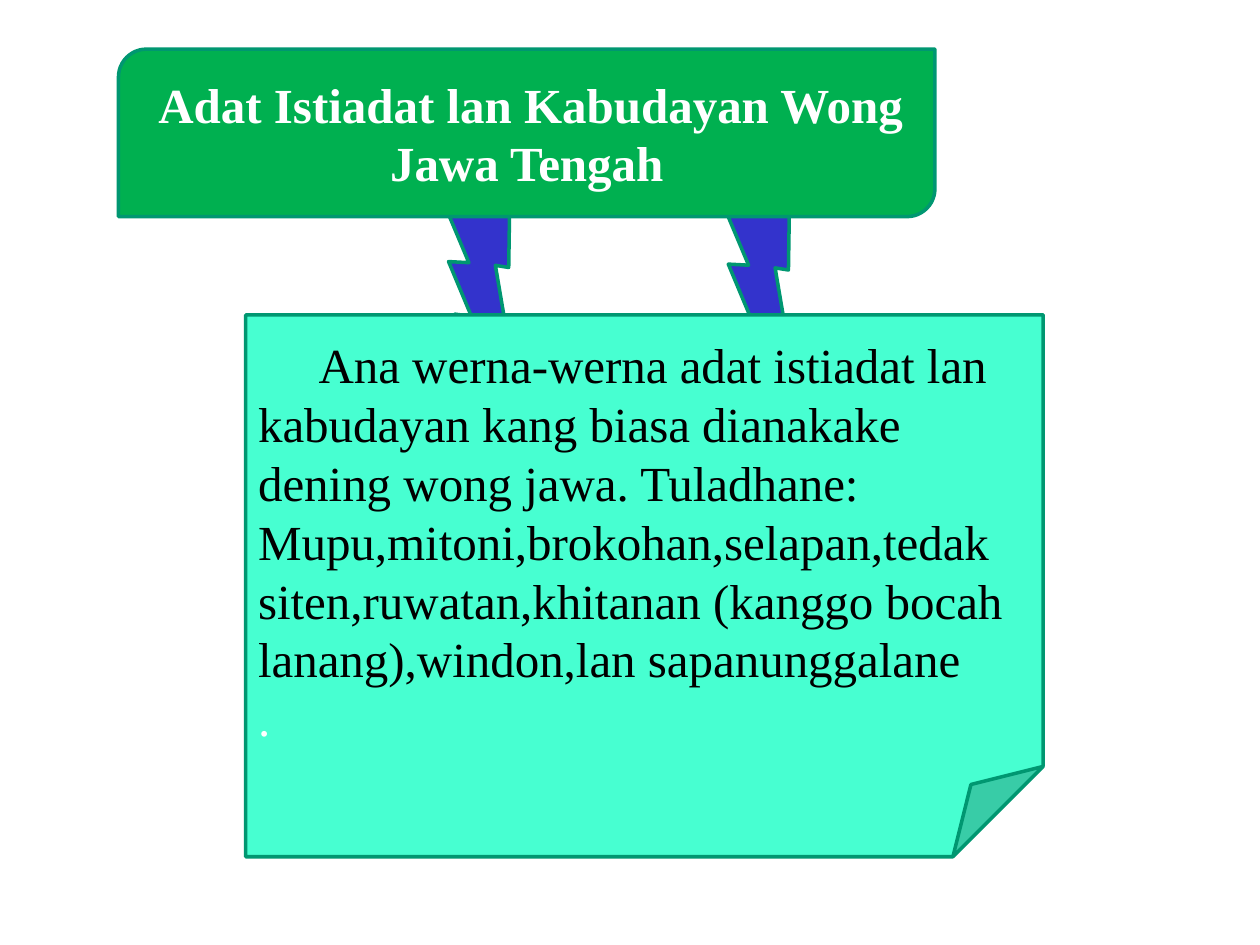
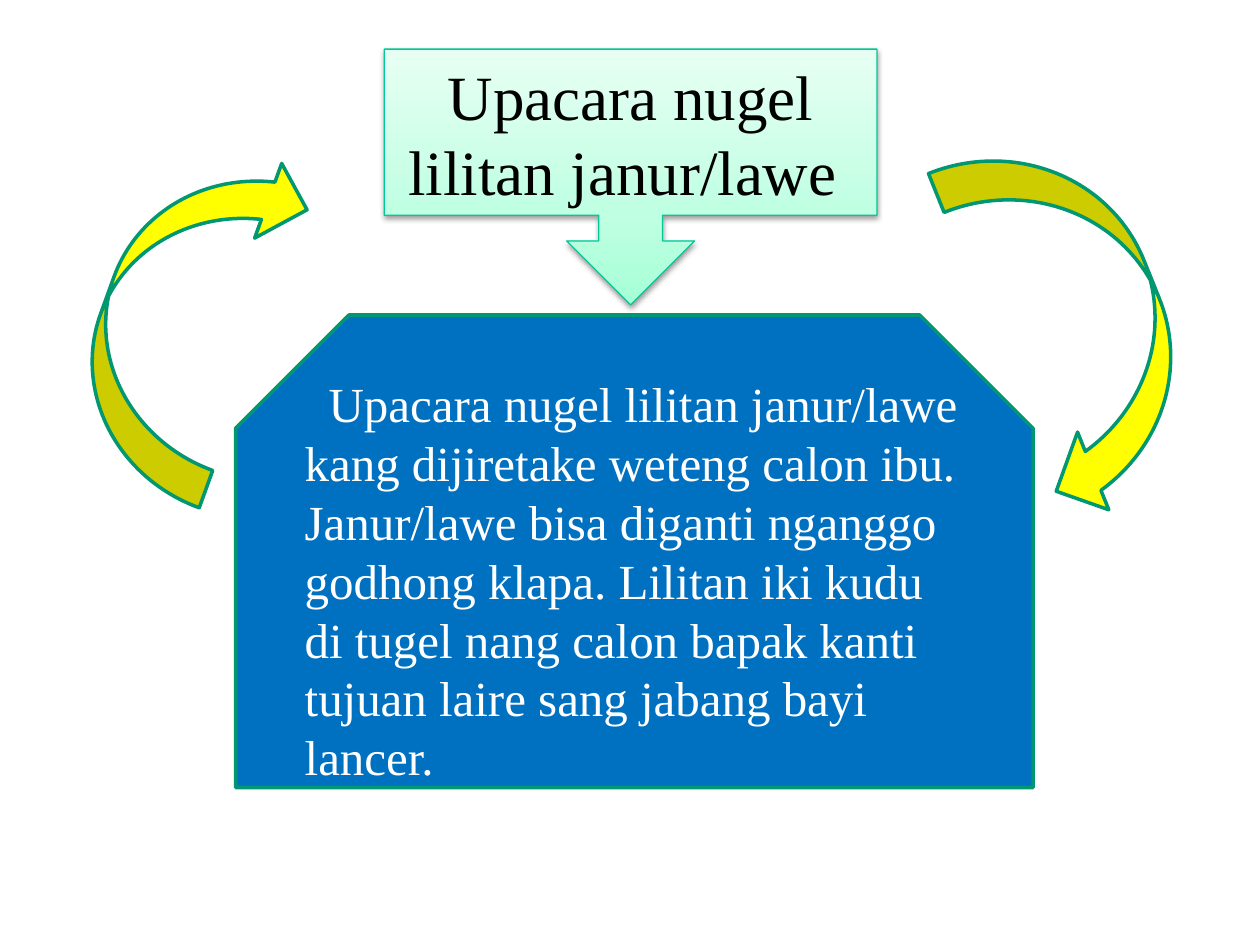
import copy
from dataclasses import dataclass

import pptx
import pptx.dml.color
import pptx.enum.shapes
import pptx.enum.text
import pptx.oxml
import pptx.oxml.ns
import pptx.util
from lxml import etree

Inches = pptx.util.Inches
Pt = pptx.util.Pt
qn = pptx.oxml.ns.qn
SHAPE = pptx.enum.shapes.MSO_SHAPE
ALIGN = pptx.enum.text.PP_ALIGN
ANCHOR = pptx.enum.text.MSO_ANCHOR


@dataclass(frozen=True)
class Theme:
    font: str = "Times New Roman"
    text_size: int = 28
    large_size: int = 36
    white: str = "FFFFFF"
    black: str = "000000"
    outline: str = "009771"
    outline_width: float = 2
    callout_outline: str = "00C896"
    callout_width: float = 0.75
    callout_stops: tuple = ((0, "A5FFD6"), (0.35, "BFFFE2"), (1, "E7FFF3"))
    bolt: str = "3333CC"
    banner: str = "00B050"
    note: str = "47FFD1"
    arrow: str = "FFFF00"
    panel: str = "0070C0"


THEME = Theme()


def rgb(value):
    return pptx.dml.color.RGBColor.from_string(value)


def write(p, text, size=THEME.text_size, color=THEME.black, bold=False,
          align=ALIGN.LEFT, indent=0):
    """Write one formatted paragraph; indent moves its first line."""
    if indent:
        pPr = p._p.get_or_add_pPr()
        pPr.set("marL", "0")
        pPr.set("indent", str(Inches(indent)))
    p.alignment = align
    r = p.add_run()
    r.text = text
    r.font.name = THEME.font
    r.font.size = Pt(size)
    r.font.bold = bold
    r.font.color.rgb = rgb(color)


class Deck:
    TOP, TITLE_HEIGHT = 0.39, 1.33
    BODY_TOP, BODY_WIDTH = 2.5, 6.33

    def __init__(self, theme):
        self.theme = theme
        self.prs = pptx.Presentation()
        self.prs.slide_width = Inches(10)
        self.prs.slide_height = Inches(7.5)
        self.slide = None

    def new_slide(self):
        self.slide = self.prs.slides.add_slide(self.prs.slide_layouts[5])

    def shape(self, kind, left, top, width, height, fill=None, rotation=0,
              flip=False):
        sp = self.slide.shapes.add_shape(
            kind, Inches(left), Inches(top), Inches(width), Inches(height))
        sp.shadow.inherit = False
        sp.rotation = rotation
        if flip:
            sp._element.spPr.xfrm.set("flipH", "1")
        if fill:
            sp.fill.solid()
            sp.fill.fore_color.rgb = rgb(fill)
        sp.line.color.rgb = rgb(self.theme.outline)
        sp.line.width = Pt(self.theme.outline_width)
        return sp

    def callout(self, left, width, height):
        """Shaded arrow callout with a soft shadow."""
        sp = self.shape(SHAPE.DOWN_ARROW_CALLOUT, left, self.TOP, width, height)
        sp.line.color.rgb = rgb(self.theme.callout_outline)
        sp.line.width = Pt(self.theme.callout_width)
        # Three-stop gradient rising from the bottom
        sp.fill.gradient()
        sp.fill.gradient_angle = 90
        gs = sp._element.spPr.find(".//" + qn("a:gs"))
        gs.addnext(copy.deepcopy(gs))
        for stop, (position, color) in zip(sp.fill.gradient_stops,
                                           self.theme.callout_stops):
            stop.position = position
            stop.color.rgb = rgb(color)
        # Shadow straight below
        effects = sp._element.spPr.find(qn("a:effectLst"))
        shadow = etree.SubElement(
            effects, qn("a:outerShdw"), blurRad=str(Pt(3.1)),
            dist=str(Pt(1.6)), dir="5400000", rotWithShape="0")
        color = etree.SubElement(shadow, qn("a:srgbClr"), val=self.theme.black)
        etree.SubElement(color, qn("a:alpha"), val="38000")

    def title(self, text, left, width, **style):
        """Place the title placeholder over the slide's heading shape."""
        sp = self.slide.shapes.title
        sp.left, sp.top = Inches(left), Inches(self.TOP)
        sp.width, sp.height = Inches(width), Inches(self.TITLE_HEIGHT)
        tf = sp.text_frame
        tf.word_wrap = True
        tf.auto_size = pptx.enum.text.MSO_AUTO_SIZE.NONE
        tf.vertical_anchor = ANCHOR.MIDDLE
        write(tf.paragraphs[0], text, align=ALIGN.CENTER, **style)
        self.slide.shapes._spTree.append(sp._element)

    def body(self, kind, left, height, fill, text, **style):
        sp = self.shape(kind, left, self.BODY_TOP, self.BODY_WIDTH, height, fill)
        tf = sp.text_frame
        tf.word_wrap = True
        tf.vertical_anchor = ANCHOR.MIDDLE
        write(tf.paragraphs[0], text, **style)
        return sp


def customs_slide(deck):
    t = deck.theme
    deck.new_slide()
    # Bolts from the banner to the note
    for left, top in ((5.42, 1.66), (3.2, 1.64)):
        deck.shape(SHAPE.LIGHTNING_BOLT, left, top, 1.17, 1.33, t.bolt,
                   rotation=33.3)
    # Banner
    left, width = 0.94, 6.48
    deck.shape(SHAPE.ROUND_2_DIAG_RECTANGLE, left, deck.TOP, width,
               deck.TITLE_HEIGHT, t.banner)
    deck.title("Adat Istiadat lan Kabudayan Wong Jawa Tengah", left, width,
               color=t.white, bold=True, indent=0.06)
    # Note
    sp = deck.body(
        SHAPE.FOLDED_CORNER, 1.95, 4.3, t.note,
        "Ana werna-werna adat istiadat lan kabudayan kang biasa dianakake "
        "dening wong jawa. Tuladhane: Mupu,mitoni,brokohan,selapan,tedak "
        "siten,ruwatan,khitanan (kanggo bocah lanang),windon,lan "
        "sapanunggalane", indent=0.48)
    write(sp.text_frame.add_paragraph(), ".", color=t.white)


def ceremony_slide(deck):
    t = deck.theme
    deck.new_slide()
    # Curved arrows on both sides
    deck.shape(SHAPE.CURVED_LEFT_ARROW, 7.89, 1.02, 1.33, 3.05, t.arrow,
               rotation=338.1)
    deck.shape(SHAPE.CURVED_RIGHT_ARROW, 0.84, 1.07, 1.26, 2.83, t.arrow,
               rotation=199.9, flip=True)
    # Heading callout
    left, width = 3.05, 3.91
    deck.callout(left, width, 2.03)
    deck.title("Upacara nugel lilitan janur/lawe ", left, width,
               size=t.large_size)
    # Explanation
    sp = deck.body(
        SHAPE.SNIP_2_SAME_RECTANGLE, 1.87, 3.75, t.panel,
        "Upacara nugel lilitan janur/lawe kang dijiretake weteng calon ibu. "
        "Janur/lawe bisa diganti nganggo godhong klapa. Lilitan iki kudu di "
        "tugel nang calon bapak kanti tujuan laire sang jabang bayi lancer.",
        color=t.white, indent=0.19)
    sp.adjustments[0] = 0.24
    sp.adjustments[1] = 0


def main():
    deck = Deck(THEME)
    customs_slide(deck)
    ceremony_slide(deck)
    deck.prs.save("out.pptx")


if __name__ == "__main__":
    main()
